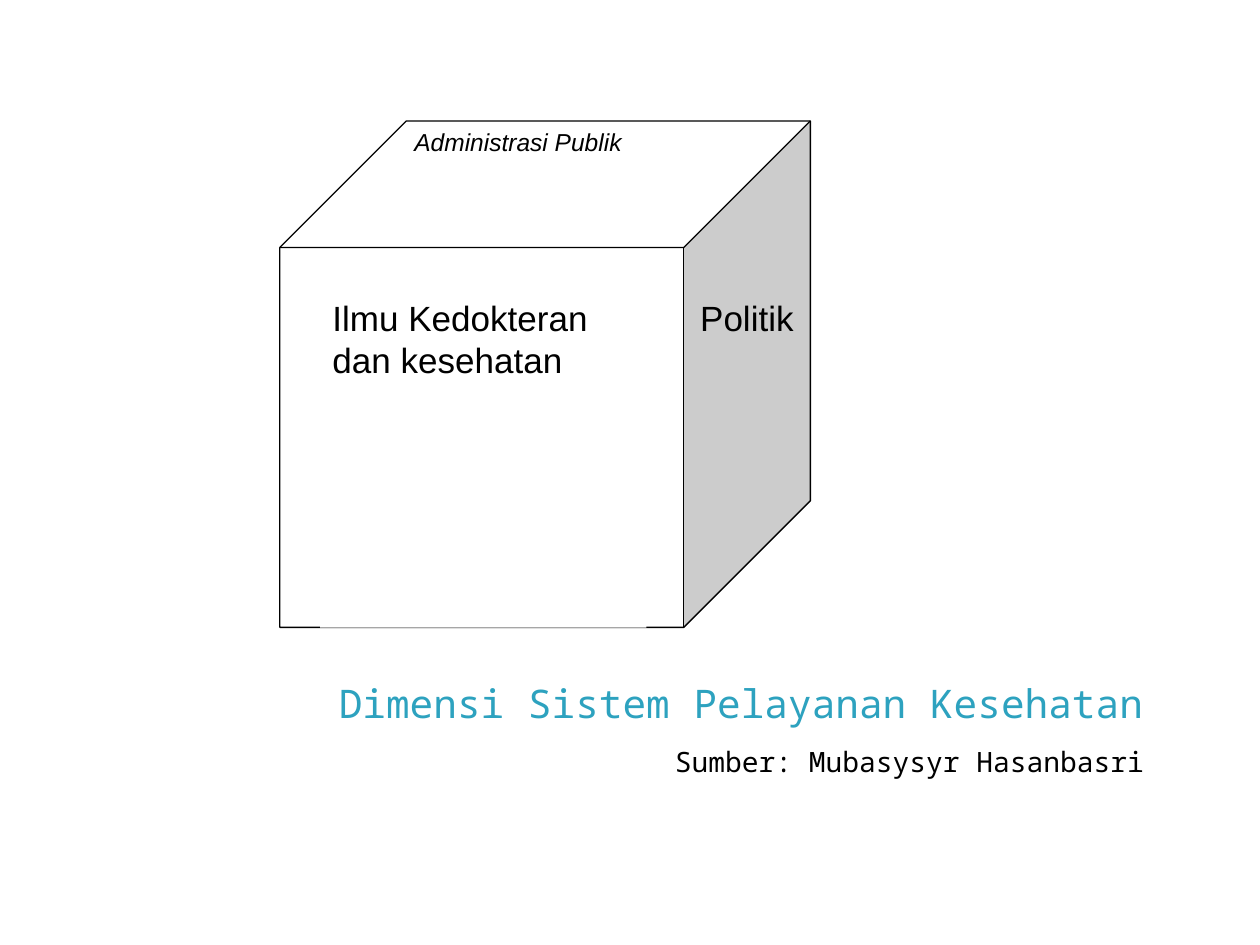
from dataclasses import dataclass

from lxml import etree
from pptx import Presentation
from pptx import util as u
from pptx.dml.color import RGBColor
from pptx.enum import shapes, text
from pptx.oxml.ns import qn


@dataclass(frozen=True)
class Theme:
    accent: RGBColor = RGBColor(0x2D, 0xA2, 0xBF)
    ink: RGBColor = RGBColor(0, 0, 0)
    paper: RGBColor = RGBColor(255, 255, 255)
    heading_font: str = "Noto Sans Mono"
    label_font: str = "Arial"
    title_size: float = 22.5
    face_size: float = 20
    source_size: float = 16
    top_size: float = 14


@dataclass(frozen=True)
class Box:
    left: float
    top: float
    width: float
    height: float

    def lengths(self) -> tuple:
        return tuple(u.Pt(n) for n in (self.left, self.top, self.width, self.height))


@dataclass(frozen=True)
class FaceLabel:
    wording: str
    box: Box
    size: float
    italic: bool = False
    filled: bool = False


THEME = Theme()
CUBE = Box(159.9, 69.1, 303.2, 289.4)
FACE_LABELS = (
    FaceLabel("Ilmu Kedokteran dan kesehatan", Box(182.9, 165.6, 186.5, 193),
              THEME.face_size, filled=True),
    FaceLabel("Administrasi Publik", Box(229.7, 69.1, 186.5, 72),
              THEME.top_size, italic=True),
    FaceLabel("Politik", Box(393, 165.6, 70, 120), THEME.face_size),
)


def write_text(shape, wording: str, *, size: float, font: str, color=THEME.ink,
               italic=False, align=text.PP_ALIGN.LEFT, anchor=text.MSO_ANCHOR.TOP) -> None:
    frame = shape.text_frame
    frame.word_wrap = True
    frame.auto_size = text.MSO_AUTO_SIZE.NONE
    frame.vertical_anchor = anchor
    paragraph = frame.paragraphs[0]
    paragraph.alignment = align
    paragraph.space_before = u.Pt(0)
    run = paragraph.add_run()
    run.text = wording
    run.font.size = u.Pt(size)
    run.font.name = font
    run.font.italic = italic
    run.font.color.rgb = color


def place(shape, box: Box) -> None:
    shape.left, shape.top, shape.width, shape.height = box.lengths()


def remove_bullet(paragraph) -> None:
    properties = paragraph._p.get_or_add_pPr()
    properties.set("marL", "0")
    properties.set("indent", "0")
    etree.SubElement(properties, qn("a:buNone"))


def draw_cube(group) -> None:
    cube = group.shapes.add_shape(shapes.MSO_SHAPE.CUBE, *CUBE.lengths())
    cube.shadow.inherit = False
    cube.adjustments[0] = 0.25
    cube.fill.solid()
    cube.fill.fore_color.rgb = THEME.paper
    cube.line.color.rgb = THEME.ink
    cube.line.width = u.Pt(0.75)


def draw_face_label(group, label: FaceLabel) -> None:
    if label.filled:
        shape = group.shapes.add_shape(shapes.MSO_SHAPE.RECTANGLE, *label.box.lengths())
        shape.shadow.inherit = False
        shape.fill.solid()
        shape.fill.fore_color.rgb = THEME.paper
        shape.line.fill.background()
    else:
        shape = group.shapes.add_textbox(*label.box.lengths())
    write_text(shape, label.wording, size=label.size, font=THEME.label_font,
               italic=label.italic)


def main() -> None:
    presentation = Presentation()
    presentation.slide_width, presentation.slide_height = u.Pt(720), u.Pt(540)
    slide = presentation.slides.add_slide(presentation.slide_layouts[1])

    # Title and source line
    title = slide.shapes.title
    place(title, Box(72, 383.8, 589, 36))
    write_text(title, "Dimensi Sistem Pelayanan Kesehatan", size=THEME.title_size,
               font=THEME.heading_font, color=THEME.accent,
               align=text.PP_ALIGN.RIGHT, anchor=text.MSO_ANCHOR.MIDDLE)
    source = slide.placeholders[1]
    place(source, Box(347.8, 421.9, 313.2, 72))
    remove_bullet(source.text_frame.paragraphs[0])
    write_text(source, "Sumber: Mubasysyr Hasanbasri", size=THEME.source_size,
               font=THEME.heading_font, align=text.PP_ALIGN.RIGHT)

    # Cube with one label per visible face
    group = slide.shapes.add_group_shape()
    draw_cube(group)
    for label in FACE_LABELS:
        draw_face_label(group, label)

    presentation.save("out.pptx")


if __name__ == "__main__":
    main()
